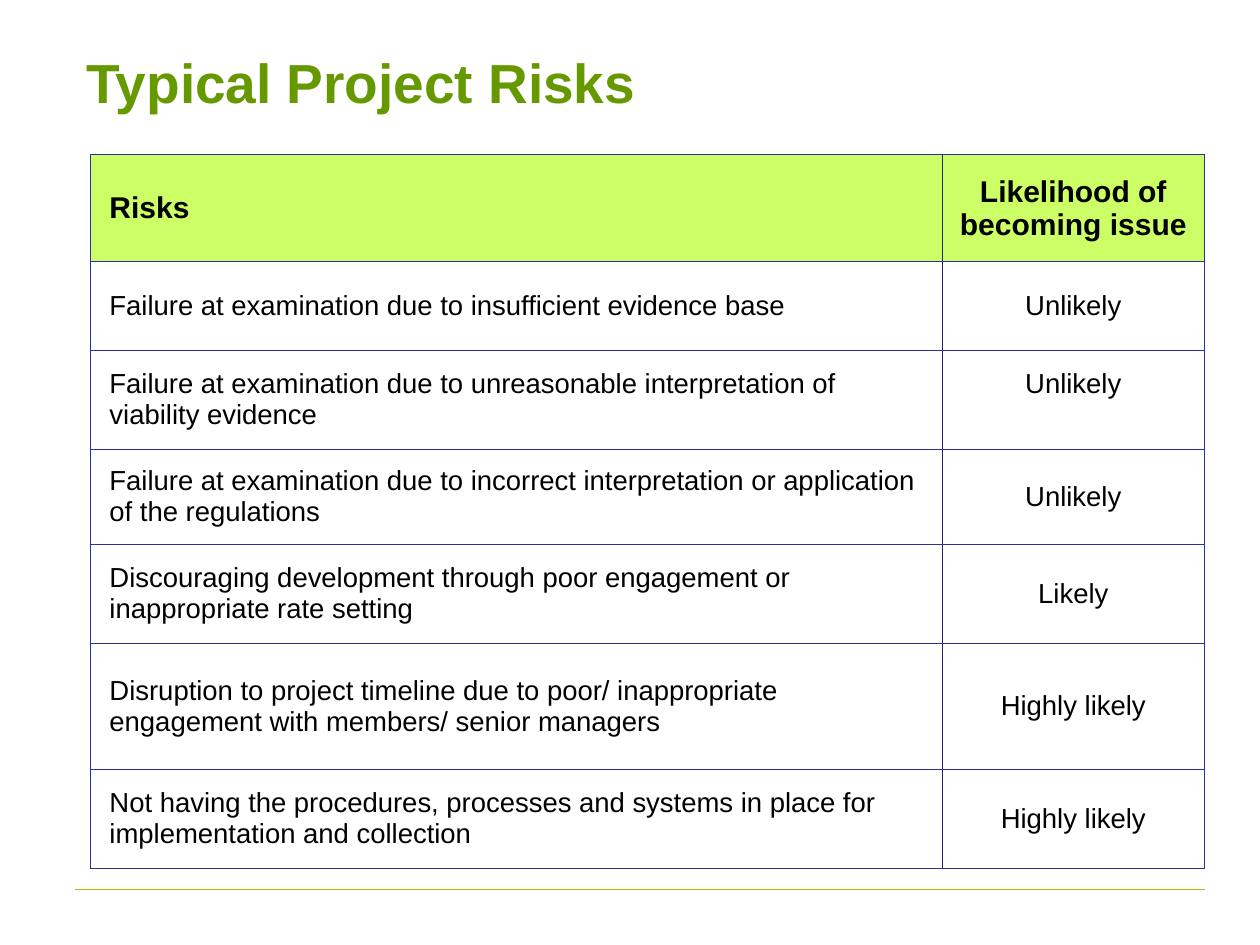
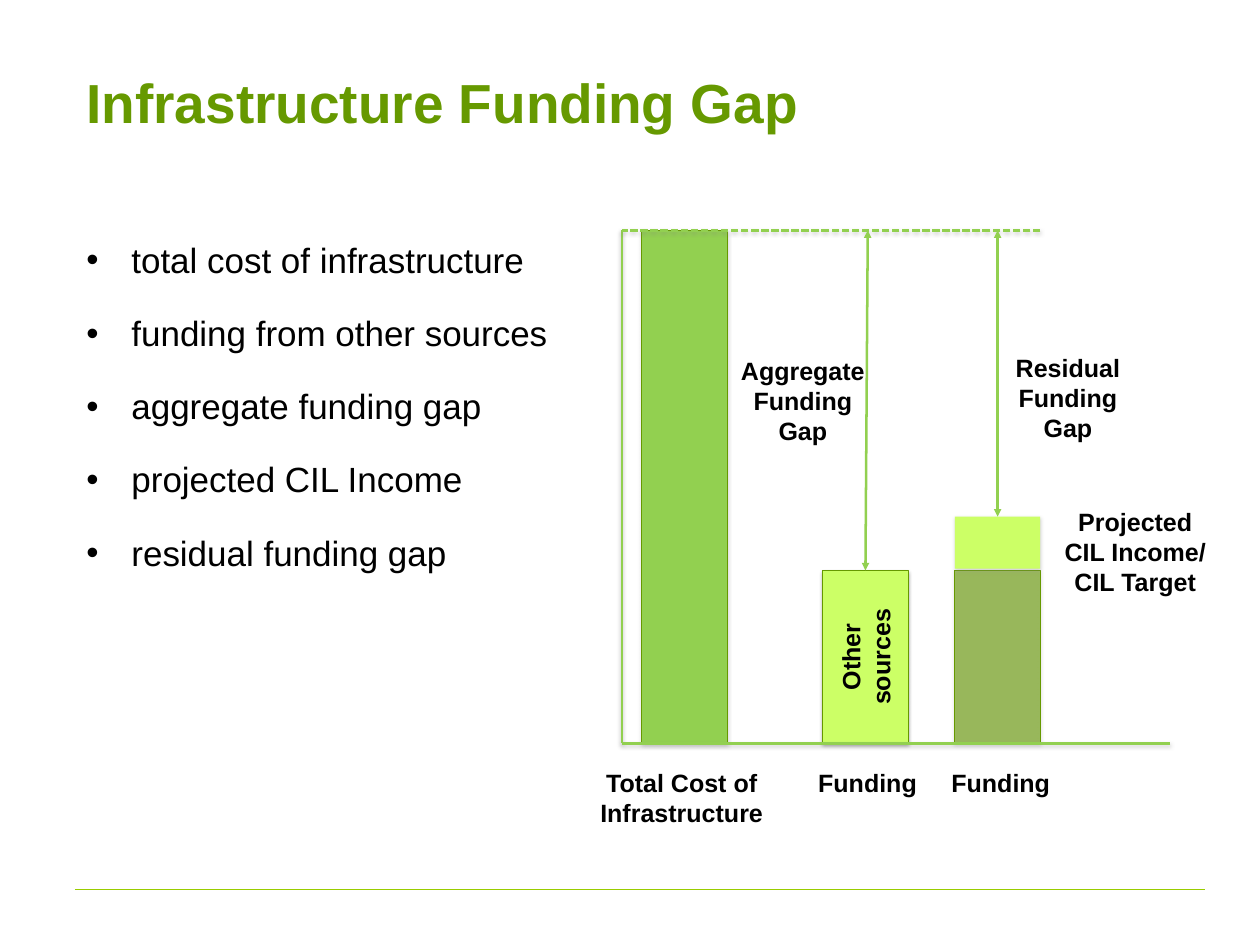
import pptx
import pptx.dml.color
import pptx.enum.dml
import pptx.enum.shapes
import pptx.enum.text
import pptx.oxml
import pptx.oxml.ns
import pptx.util

Cm = pptx.util.Cm
Pt = pptx.util.Pt
ALIGN = pptx.enum.text.PP_ALIGN
ANCHOR = pptx.enum.text.MSO_ANCHOR
FIT = pptx.enum.text.MSO_AUTO_SIZE
DASH = pptx.enum.dml.MSO_LINE
RECT = pptx.enum.shapes.MSO_SHAPE.RECTANGLE
STRAIGHT = pptx.enum.shapes.MSO_CONNECTOR.STRAIGHT

GREEN, LIME, LEAF = "669900", "CCFF66", "92D050"
BLACK, GREY, RULE = "000000", "808080", "99CC00"
BLUE, NAVY = "2F2F98", "222268"

RISKS = [
    ("Risks", "Likelihood of becoming issue"),
    ("Failure at examination due to insufficient evidence base", "Unlikely"),
    ("Failure at examination due to unreasonable interpretation of viability evidence", "Unlikely"),
    ("Failure at examination due to incorrect interpretation or application of the regulations", "Unlikely"),
    ("Discouraging development through poor engagement or inappropriate rate setting", "Likely"),
    ("Disruption to project timeline due to poor/ inappropriate engagement with members/ senior managers",
     "Highly likely"),
    ("Not having the procedures, processes and systems in place for implementation and collection",
     "Highly likely"),
]
POINTS = ["total cost of infrastructure", "funding from other sources", "aggregate funding gap",
          "projected CIL Income", "residual funding gap"]


def color(text):
    return pptx.dml.color.RGBColor.from_string(text)


def apply(item, form):
    for key, value in form.items():
        setattr(item, key, value)


def node(parent, tag, **attrs):
    item = parent.makeelement(pptx.oxml.ns.qn("a:" + tag), attrs)
    parent.append(item)
    return item


def insets(side, edge=0.18):
    return {"margin_left": Cm(side), "margin_right": Cm(side),
            "margin_top": Cm(edge), "margin_bottom": Cm(edge)}


class Deck:
    def __init__(self):
        self.show = pptx.Presentation()
        apply(self.show, {"slide_width": Cm(35.56), "slide_height": Cm(26.67)})
        self.slide = None

    def page(self, title, height):
        self.slide = self.show.slides.add_slide(self.show.slide_layouts[6])
        self.line((2.11, 25.1), (34.01, 25.1), RULE, 0.75)
        self.text((2.11, 1.07, 32, height), [title], size=44, tint=GREEN, bold=True,
                  anchor=ANCHOR.MIDDLE)

    def words(self, frame, lines, size, tint=BLACK, bold=False, form=None):
        for index, line in enumerate(lines):
            para = frame.paragraphs[0] if index == 0 else frame.add_paragraph()
            apply(para, form or {})
            run = para.add_run()
            run.text = line
            apply(run.font, {"name": "Arial", "size": Pt(size), "bold": bold})
            run.font.color.rgb = color(tint)

    def text(self, area, lines, size, tint=BLACK, bold=False, form=None, anchor=ANCHOR.TOP,
             fit=FIT.NONE):
        frame = self.slide.shapes.add_textbox(*map(Cm, area)).text_frame
        apply(frame, {"word_wrap": True, "auto_size": fit, "vertical_anchor": anchor, **insets(0.33)})
        self.words(frame, lines, size, tint, bold, form)
        return frame

    def label(self, area, *lines):
        self.text(area, lines, 20, bold=True, form={"alignment": ALIGN.CENTER},
                  fit=FIT.SHAPE_TO_FIT_TEXT)

    def bullets(self, area, lines):
        frame = self.text(area, lines, 28, form={"line_spacing": 1.5, "space_before": Pt(8)})
        for para in frame.paragraphs:
            props = para._p.get_or_add_pPr()
            props.set("marL", str(Cm(1.27)))
            props.set("indent", str(-Cm(1.27)))
            node(props, "buFont", typeface="Arial")
            node(props, "buChar", char="•")

    def shade(self, effect, tint, alpha, gap):
        cast = node(effect, "outerShdw", blurRad=str(Pt(3.1)), dist=str(Pt(gap)),
                    dir="5400000", rotWithShape="0")
        node(node(cast, "srgbClr", val=tint), "alpha", val=str(alpha * 1000))

    def line(self, start, end, tint, width, dash=None, arrows=False, shadow=False, box=None):
        link = self.slide.shapes.add_connector(STRAIGHT, *map(Cm, start + end))
        link.line.color.rgb = color(tint)
        apply(link.line, {"width": Pt(width), "dash_style": dash})
        if arrows:
            for tag in ("headEnd", "tailEnd"):
                node(link.line._get_or_add_ln(), tag, type="triangle")
        effect = node(link._element.spPr, "effectLst")
        if shadow:
            self.shade(effect, GREY, 38, 1.6)
        if box is not None:
            link.end_connect(box, 0)

    def bar(self, area, fill, edge=True, alpha=None, shadow=GREY):
        box = self.slide.shapes.add_shape(RECT, *map(Cm, area))
        box.fill.solid()
        box.fill.fore_color.rgb = color(fill)
        props = box._element.spPr
        if alpha:
            node(props.find(".//" + pptx.oxml.ns.qn("a:srgbClr")), "alpha", val=str(alpha * 1000))
        if edge:
            box.line.color.rgb = color(GREEN)
            box.line.width = Pt(0.75)
        else:
            box.line.fill.background()
        box.shadow.inherit = False
        self.shade(props.find(pptx.oxml.ns.qn("a:effectLst")), shadow, 35, 1.8)
        return box

    def cell(self, cell, text, head, right):
        apply(cell, {"vertical_anchor": ANCHOR.MIDDLE, **insets(0.3)})
        self.words(cell.text_frame, [text], 24 if head else 22, bold=head,
                   form={"alignment": ALIGN.CENTER if right else ALIGN.LEFT})
        props = cell._tc.get_or_add_tcPr()
        for side in "LRTB":
            inner = side == ("L" if right else "R")
            edge = node(props, "ln" + side, w=str(Pt(1 if inner else 0.75)))
            node(node(edge, "solidFill"), "srgbClr", val=NAVY if inner else BLUE)
        if head:
            cell.fill.solid()
            cell.fill.fore_color.rgb = color(LIME)
        else:
            cell.fill.background()
        if not right:
            cell.text_frame.paragraphs[0]._p.get_or_add_pPr().set("marL", str(Cm(0.25)))

    def table(self, left, top, widths, heights, rows):
        area = (left, top, sum(widths), sum(heights))
        grid = self.slide.shapes.add_table(len(rows), len(widths), *map(Cm, area)).table
        apply(grid, {"first_row": False, "horz_banding": False})
        for col, width in zip(grid.columns, widths):
            col.width = Cm(width)
        for row, height in zip(grid.rows, heights):
            row.height = Cm(height)
        for r, row in enumerate(rows):
            for c, text in enumerate(row):
                self.cell(grid.cell(r, c), text, r == 0, c == 1)
        return grid


def risks(deck):
    deck.page("Typical Project Risks", 2.46)
    grid = deck.table(2.54, 4.37, [24.05, 7.4], [3.02, 2.49, 2.79, 2.69, 2.79, 3.56, 2.79], RISKS)
    grid.cell(2, 1).margin_bottom = Cm(1.05)


def funding(deck):
    deck.page("Infrastructure Funding Gap", 3.58)
    deck.bullets((2.11, 5.97, 15.67, 11.76), POINTS)
    top, base, level, wide = 6.5, 20.98, 16.1, 2.41
    left, total, other, last = 17.55, 18.11, 23.22, 26.95
    deck.line((left, top), (left, base), LEAF, 2, shadow=True)
    deck.bar((total, top, wide, base - top), LEAF)
    source = deck.bar((other, level, wide, base - level), LIME, shadow=BLACK)
    frame = source.text_frame
    apply(frame, {"vertical_anchor": ANCHOR.MIDDLE, **insets(0)})
    frame._txBody.bodyPr.set("vert", "vert270")
    deck.words(frame, ["Other", "sources"], 20, bold=True, form={"alignment": ALIGN.CENTER})
    deck.line((last + wide, top), (left, top), LEAF, 2, dash=DASH.SQUARE_DOT, shadow=True)
    deck.bar((last, level, wide, base - level), GREEN, alpha=60)
    target = deck.bar((last, 14.58, wide, 1.47), LIME, edge=False)
    for x, box in ((24.49, source), (last + wide / 2, target)):
        deck.line((x, top), (x, level), LEAF, 2, arrows=True, box=box)
    deck.label((29.69, 14.12, 4.7, 2.9), "Projected CIL Income/ CIL Target")
    deck.label((27.79, 9.78, 4.7, 2.9), "Residual Funding Gap")
    deck.label((20.55, 9.86, 4.22, 2.9), "Aggregate", "Funding Gap")
    deck.label((16.18, 21.49, 6.12, 2.06), "Total Cost of Infrastructure")
    for x in (22.3, 26.06):
        deck.label((x, 21.49, 4.37, 1.19), "Funding")
    deck.line((33.02, base), (left, base), LEAF, 2, shadow=True)


def main():
    deck = Deck()
    risks(deck)
    funding(deck)
    deck.show.save("out.pptx")


if __name__ == "__main__":
    main()
